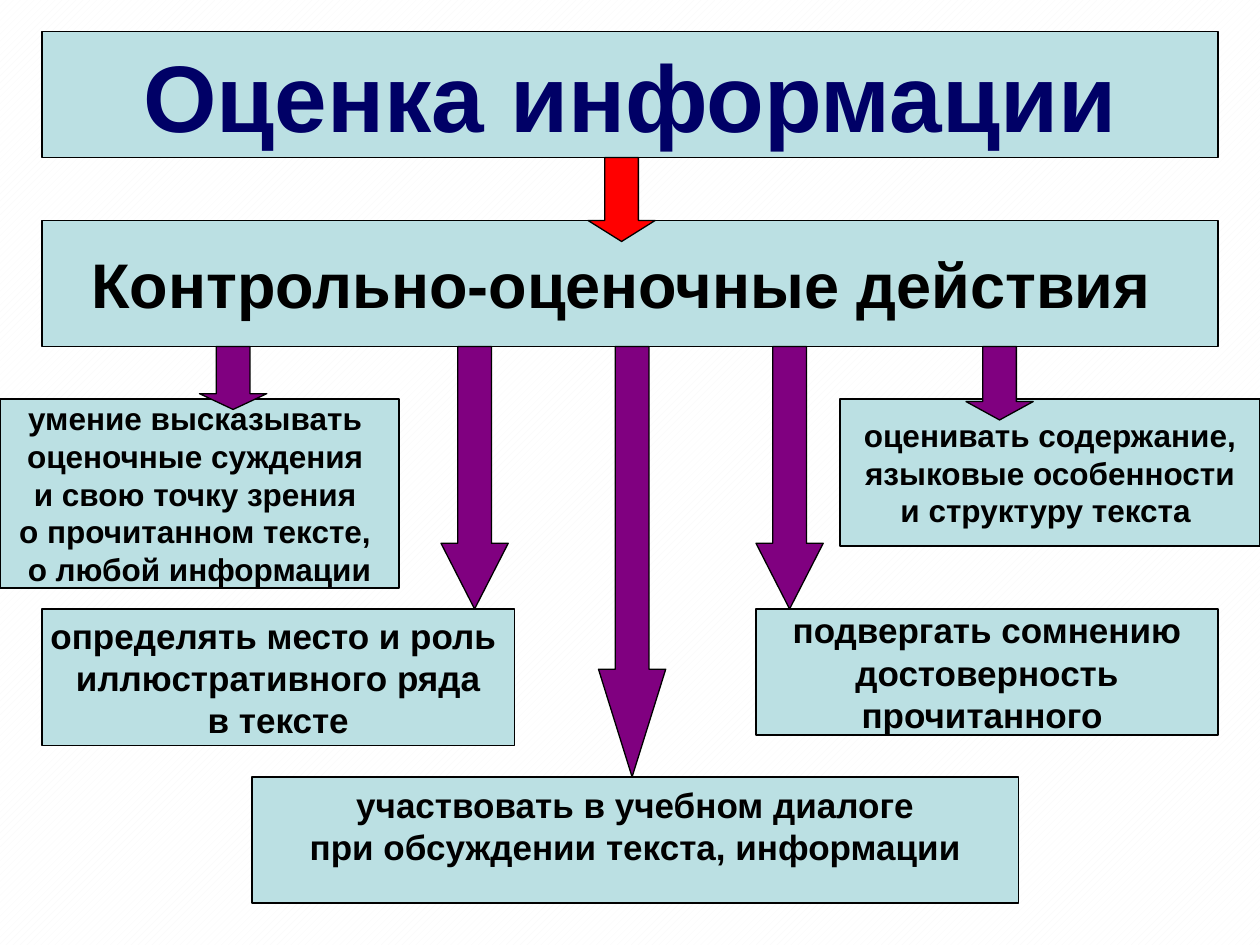
import pptx
import pptx.dml.color
import pptx.enum.dml
import pptx.enum.shapes
import pptx.enum.text
import pptx.util

RGBColor = pptx.dml.color.RGBColor
ANCHOR = pptx.enum.text.MSO_ANCHOR
SHAPE = pptx.enum.shapes.MSO_SHAPE

PALE_TEAL = RGBColor(0xBB, 0xE0, 0xE3)
NAVY = RGBColor(0x00, 0x00, 0x66)
BLACK = RGBColor(0x00, 0x00, 0x00)
RED = RGBColor(0xFF, 0x00, 0x00)
PURPLE = RGBColor(0x80, 0x00, 0x80)
WHITE = RGBColor(0xFF, 0xFF, 0xFF)
STRIPE_GRAY = RGBColor(0xF8, 0xF8, 0xF8)

# The slide is a grid of 120 columns by 90 rows, 12 cells to the inch
COLUMNS, ROWS = 120, 90
CELL = pptx.util.Inches(1) // 12
ARROW_WIDTH = 6.4

# Column, row, width, height, text size, lines
ACTION_BOXES = [
    (0, 38, 38, 18, 18, ["умение высказывать ", "оценочные суждения ",
                         "и свою точку зрения ", "о прочитанном тексте, ",
                         "о любой информации"]),
    (80, 38, 40, 14, 18, ["оценивать содержание,", " языковые особенности ",
                          "и структуру текста "]),
    (4, 58, 45, 13, 20, ["определять место и роль ", "иллюстративного ряда",
                         " в тексте "]),
    (72, 58, 44, 12, 20, ["подвергать сомнению", " достоверность ",
                          "прочитанного "]),
]

# Column and height of each arrow below the second heading
ACTION_ARROWS = [(19, 6), (92, 7), (42, 25), (72, 25), (57, 41)]


def add_outlined_shape(slide, kind, column, row, width, height, color):
    lengths = [round(cells * CELL) for cells in (column, row, width, height)]
    shape = slide.shapes.add_shape(kind, *lengths)
    shape.shadow.inherit = False
    shape.fill.solid()
    shape.fill.fore_color.rgb = color
    shape.line.color.rgb = BLACK
    shape.line.width = pptx.util.Pt(0.75)
    return shape


def add_box(slide, column, row, width, height, size, lines,
            color=BLACK, anchor=ANCHOR.MIDDLE):
    box = add_outlined_shape(slide, SHAPE.RECTANGLE, column, row,
                             width, height, PALE_TEAL)
    frame = box.text_frame
    frame.word_wrap = False
    frame.vertical_anchor = anchor
    for index, line in enumerate(lines):
        paragraph = frame.add_paragraph() if index else frame.paragraphs[0]
        paragraph.alignment = pptx.enum.text.PP_ALIGN.CENTER
        run = paragraph.add_run()
        run.text = line
        run.font.name = "Arial"
        run.font.size = pptx.util.Pt(size)
        run.font.bold = True
        run.font.color.rgb = color


def add_down_arrow(slide, column, row, height, color):
    arrow = add_outlined_shape(slide, SHAPE.DOWN_ARROW, column, row,
                               ARROW_WIDTH, height, color)
    # The head takes a quarter of the height, at least a quarter of the width
    arrow.adjustments[0] = 0.5
    arrow.adjustments[1] = max(0.25, height / 4 / ARROW_WIDTH)


def set_striped_background(slide):
    fill = slide.background.fill
    fill.patterned()
    fill.pattern = pptx.enum.dml.MSO_PATTERN.WIDE_UPWARD_DIAGONAL
    fill.fore_color.rgb = STRIPE_GRAY
    fill.back_color.rgb = WHITE


def main():
    presentation = pptx.Presentation()
    presentation.slide_width = COLUMNS * CELL
    presentation.slide_height = ROWS * CELL
    slide = presentation.slides.add_slide(presentation.slide_layouts[6])
    set_striped_background(slide)

    # Headings
    add_box(slide, 4, 3, 112, 12, 54, ["Оценка информации"], color=NAVY)
    add_box(slide, 4, 21, 112, 12, 36, ["Контрольно-оценочные действия "])

    # Actions
    for box in ACTION_BOXES:
        add_box(slide, *box)
    add_box(slide, 24, 74, 73, 12, 20,
            ["участвовать в учебном диалоге",
             "при обсуждении текста, информации"], anchor=ANCHOR.TOP)

    # Arrows
    add_down_arrow(slide, 56, 15, 8, RED)
    for column, height in ACTION_ARROWS:
        add_down_arrow(slide, column, 33, height, PURPLE)

    presentation.save("out.pptx")


if __name__ == "__main__":
    main()
